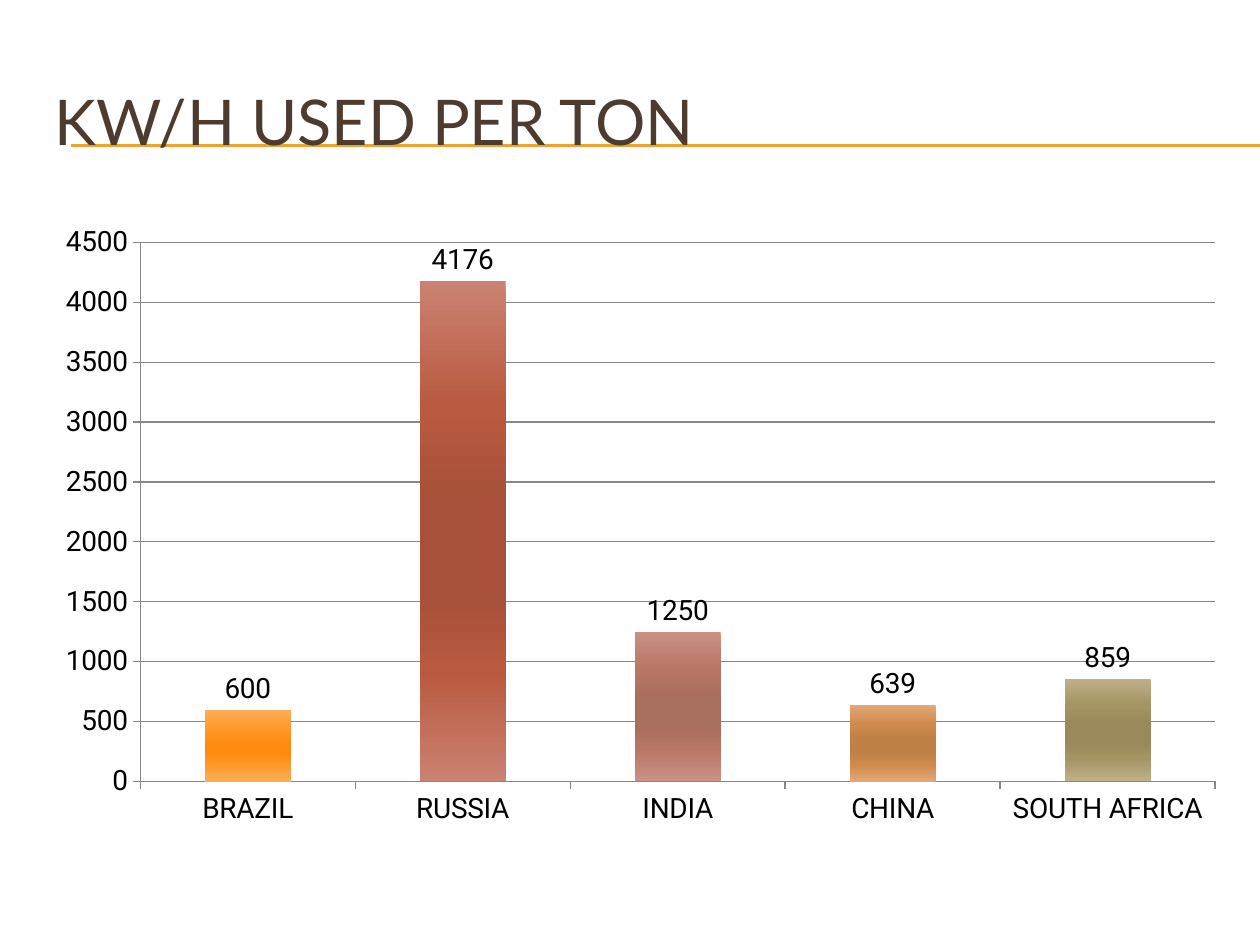
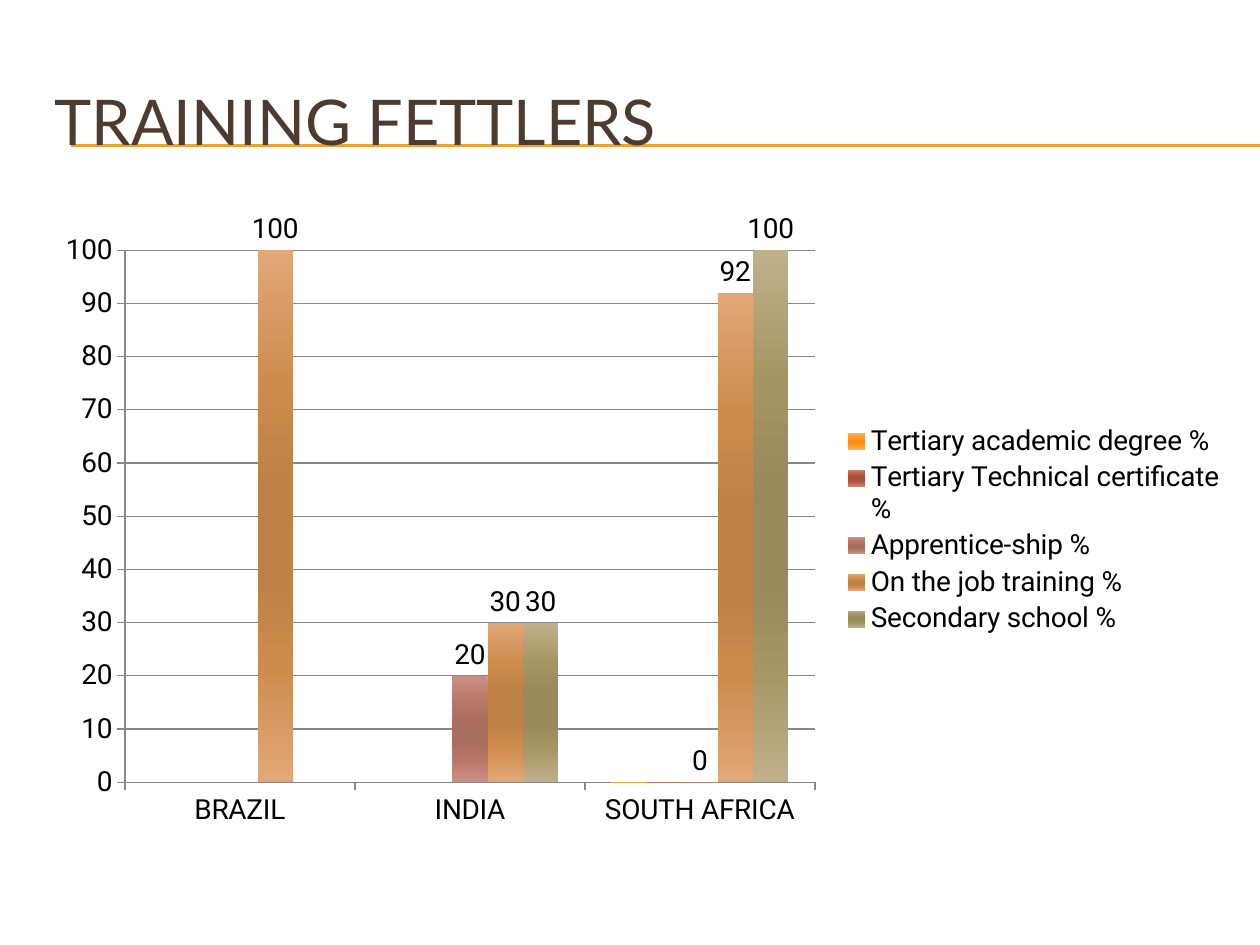
from lxml.etree import SubElement
from pptx import Presentation
from pptx.chart.data import CategoryChartData
from pptx.dml.color import RGBColor
from pptx.enum.chart import XL_CHART_TYPE as ChartType
from pptx.enum.chart import XL_LABEL_POSITION as LabelPosition
from pptx.enum.chart import XL_LEGEND_POSITION as LegendPosition
from pptx.enum.chart import XL_TICK_MARK as TickMark
from pptx.enum.shapes import MSO_CONNECTOR as Connector
from pptx.enum.text import MSO_ANCHOR as Anchor
from pptx.enum.text import MSO_AUTO_SIZE as AutoSize
from pptx.enum.text import PP_ALIGN as Align
from pptx.oxml.ns import qn
from pptx.util import Pt

COLOURS = {
    "title": "4E3B30",
    "rule": "F0A22E",
    "text": "000000",
    "grid": "878787",
}
# Edge, shoulder and core colour of each bar gradient
BAR_SHADES = [
    ("FFAE5C", "FF9A2B", "FF8C10"),
    ("CB8272", "B85A40", "A85039"),
    ("CB9186", "B87666", "A86E5E"),
    ("E2A878", "CE8B4D", "BF8145"),
    ("BFB08A", "A59564", "99895B"),
]
GRADIENT_STOPS = [(0, 0), (25, 1), (45, 2), (62, 2), (78, 1), (100, 0)]
TITLE_FONT = "Lato"
CHART_FONT = "Roboto"
MARGIN = 24
CONTENT_WIDTH = 684


def rgb(name):
    return RGBColor.from_string(COLOURS[name])


def add_rule(slide, top):
    """Draw a thin line behind the title, running to the right edge."""
    line = slide.shapes.add_connector(
        Connector.STRAIGHT, Pt(40.5), Pt(top), Pt(720), Pt(top))
    line.line.color.rgb = rgb("rule")
    line.line.width = Pt(0.75)
    SubElement(line.element.spPr, qn("a:effectLst"))
    slide.shapes.title.element.addprevious(line.element)


def set_title(slide, text):
    title = slide.shapes.title
    title.left, title.top = Pt(MARGIN), Pt(36)
    title.width, title.height = Pt(CONTENT_WIDTH), Pt(66)
    text_frame = title.text_frame
    text_frame.text = text
    text_frame.auto_size = AutoSize.NONE
    text_frame.vertical_anchor = Anchor.MIDDLE
    paragraph = text_frame.paragraphs[0]
    paragraph.alignment = Align.LEFT
    font = paragraph.runs[0].font
    font.name, font.size = TITLE_FONT, Pt(36)
    font.color.rgb = rgb("title")


def add_titled_slide(presentation, text):
    slide = presentation.slides.add_slide(presentation.slide_layouts[5])
    set_title(slide, text)
    for top in (82.8, 83.5):
        add_rule(slide, top)
    return slide


def shade_bar(fill, shades):
    """Fill a bar from top to bottom, light at the ends and dark inside."""
    fill.gradient()
    fill.gradient_angle = 270
    stop_list = fill.gradient_stops._gsLst
    for stop in list(stop_list):
        stop_list.remove(stop)
    for position, shade in GRADIENT_STOPS:
        stop = SubElement(stop_list, qn("a:gs"), pos=str(position * 1000))
        SubElement(stop, qn("a:srgbClr"), val=shades[shade])


def style_line(line):
    line.color.rgb = rgb("grid")
    line.width = Pt(0.75)


def style_axes(chart, maximum, step):
    for axis in (chart.category_axis, chart.value_axis):
        axis.major_tick_mark = TickMark.OUTSIDE
        axis.minor_tick_mark = TickMark.NONE
        style_line(axis.format.line)
    chart.category_axis.has_major_gridlines = False
    value_axis = chart.value_axis
    value_axis.minimum_scale = 0
    value_axis.maximum_scale = maximum
    value_axis.major_unit = step
    value_axis.has_major_gridlines = True
    style_line(value_axis.major_gridlines.format.line)


def show_values(series):
    labels = series.data_labels
    labels.show_value = True
    labels.position = LabelPosition.OUTSIDE_END


def add_column_chart(slide, categories, series_values, maximum, step):
    data = CategoryChartData()
    data.categories = categories
    for name, values in series_values.items():
        data.add_series(name, values)
    chart = slide.shapes.add_chart(
        ChartType.COLUMN_CLUSTERED, Pt(MARGIN), Pt(122.4),
        Pt(CONTENT_WIDTH), Pt(356.4), data).chart
    chart.has_title = False
    chart.has_legend = False
    chart.font.name, chart.font.size = CHART_FONT, Pt(16)
    chart.font.color.rgb = rgb("text")
    plot = chart.plots[0]
    plot.gap_width, plot.overlap = 150, 0
    plot.vary_by_categories = False
    style_axes(chart, maximum, step)
    return chart


def add_energy_slide(presentation):
    slide = add_titled_slide(presentation, "KW/H USED PER TON")
    chart = add_column_chart(
        slide, ["BRAZIL", "RUSSIA", "INDIA", "CHINA", "SOUTH AFRICA"],
        {"Series 1": [600, 4176, 1250, 639, 859]}, 4500, 500)
    series = chart.plots[0].series[0]
    for index, shades in enumerate(BAR_SHADES):
        shade_bar(series.points[index].format.fill, shades)
    show_values(series)


def add_training_slide(presentation):
    slide = add_titled_slide(presentation, "TRAINING FETTLERS")
    chart = add_column_chart(
        slide, ["BRAZIL", "INDIA", "SOUTH AFRICA"],
        {
            "Tertiary academic degree %": [None, None, 0],
            "Tertiary Technical certificate %": [None, None, 0],
            "Apprentice-ship %": [None, 20, 0],
            "On the job training %": [100, 30, 92],
            "Secondary school %": [None, 30, 100],
        }, 100, 10)
    chart.has_legend = True
    chart.legend.position = LegendPosition.RIGHT
    chart.legend.include_in_layout = False
    all_series = list(chart.plots[0].series)
    for series, shades in zip(all_series, BAR_SHADES):
        shade_bar(series.format.fill, shades)
    # The two tertiary levels carry no value labels
    for series in all_series[2:]:
        show_values(series)


def main():
    presentation = Presentation()
    presentation.slide_width, presentation.slide_height = Pt(720), Pt(540)
    add_energy_slide(presentation)
    add_training_slide(presentation)
    presentation.save("out.pptx")


if __name__ == "__main__":
    main()
